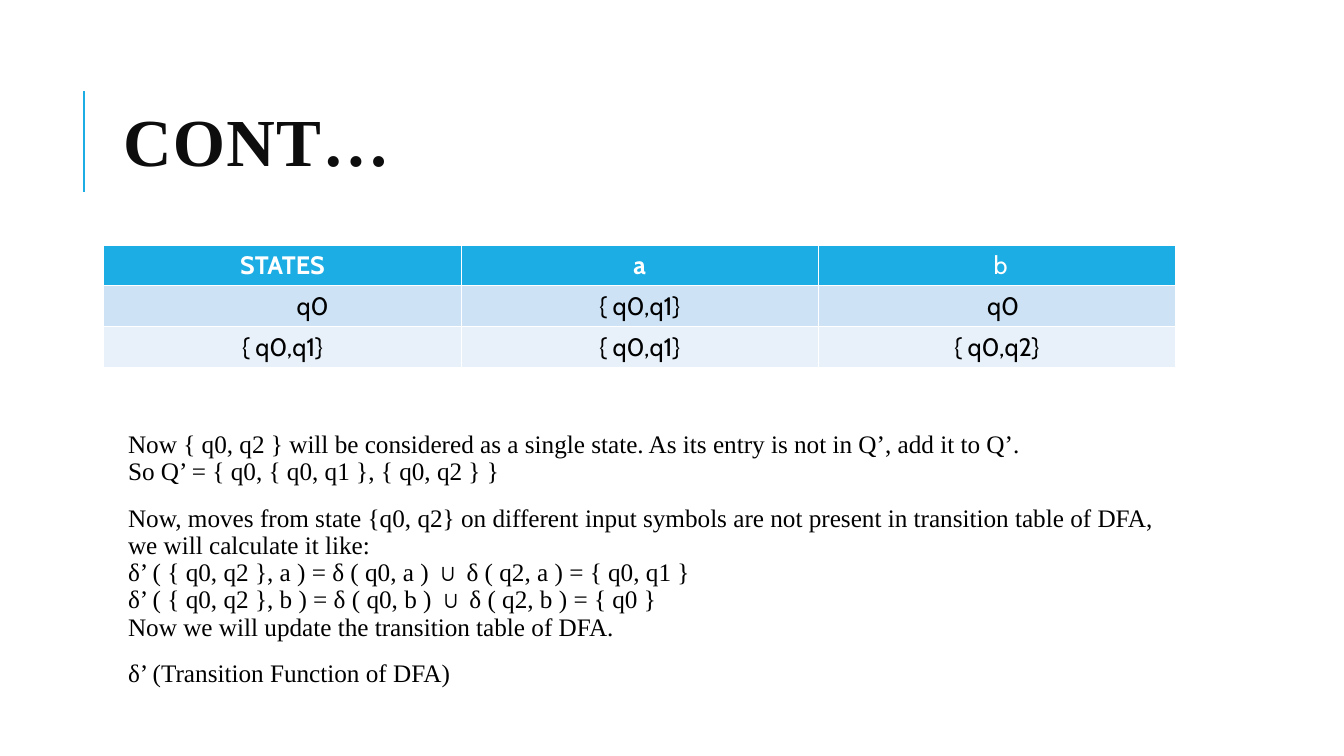
from lxml import etree
from pptx import Presentation
from pptx.dml.color import RGBColor
from pptx.enum import shapes, text
from pptx.oxml import ns
from pptx.util import Inches, Pt

SERIF = "Times New Roman"
ACCENT = "1CADE4"
ROW_FILLS = [ACCENT, "CDE3F5", "E8F1FA"]
STATES = [
    ["STATES", "a", "b"],
    ["q0", "{ q0,q1}", "q0"],
    ["{ q0,q1}", "{ q0,q1}", "{ q0,q2}"],
]
EXTRA_LEFT = {(0, 2): 0.07, (1, 0): 0.6, (1, 2): 0.12}
EXPLANATION = [
    "Now { q0, q2 } will be considered as a single state. "
    "As its entry is not in Q’, add it to Q’.\v"
    "So Q’ = { q0, { q0, q1 }, { q0, q2 } }",
    "Now, moves from state {q0, q2} on different input symbols are not "
    "present in transition table of DFA, we will calculate it like:\v"
    "δ’ ( { q0, q2 }, a ) = δ ( q0, a ) ∪ δ ( q2, a ) = { q0, q1 }\v"
    "δ’ ( { q0, q2 }, b ) = δ ( q0, b ) ∪ δ ( q2, b ) = { q0 }\v"
    "Now we will update the transition table of DFA.",
    "δ’ (Transition Function of DFA)",
]


def color(value):
    return RGBColor.from_string(value)


def set_font(font, name, size, value, bold=False):
    font.name = name
    font.size = Pt(size)
    font.bold = bold
    font.color.rgb = color(value)


def place(shape, left, top, width, height):
    shape.left, shape.top = Inches(left), Inches(top)
    shape.width, shape.height = Inches(width), Inches(height)


def add_accent_line(slide):
    accent = slide.shapes.add_connector(
        shapes.MSO_CONNECTOR.STRAIGHT,
        Inches(0.83), Inches(1.9), Inches(0.83), Inches(0.9))
    accent.line.color.rgb = color(ACCENT)
    accent.line.width = Pt(1.5)
    etree.SubElement(accent._element.spPr, ns.qn("a:effectLst"))


def fill_title(title):
    place(title, 1.12, 0.64, 10.63, 1.64)
    frame = title.text_frame
    frame.text = "CONT…"
    frame.auto_size = text.MSO_AUTO_SIZE.NONE
    frame.vertical_anchor = text.MSO_ANCHOR.MIDDLE
    heading = frame.paragraphs[0]
    heading.alignment = text.PP_ALIGN.LEFT
    heading.line_spacing = 0.8
    set_font(heading.font, SERIF, 48, "0D0D0D", True)
    heading.runs[0].font._element.set("spc", "100")


def fill_explanation(body):
    place(body, 1.12, 2.5, 10.57, 4.4)
    frame = body.text_frame
    frame.text = "\n".join(EXPLANATION)
    frame.auto_size = text.MSO_AUTO_SIZE.NONE
    frame.vertical_anchor = text.MSO_ANCHOR.TOP
    frame.margin_left = frame.margin_right = frame.margin_bottom = Inches(0.05)
    frame.margin_top = Inches(1.78)
    for index, step in enumerate(frame.paragraphs):
        step.line_spacing = 0.9
        step.space_before = Pt(12 if index else 0)
        step.space_after = Pt(2)
        set_font(step.font, SERIF, 18, "000000")
        properties = step._p.get_or_add_pPr()
        properties.set("marL", str(Inches(0.1)))
        properties.set("indent", "0")
        properties.insert_element_before(
            etree.Element(ns.qn("a:buNone")), "a:tabLst", "a:defRPr", "a:extLst")


def add_state_table(slide):
    table = slide.shapes.add_table(
        len(STATES), len(STATES[0]), Inches(1.03), Inches(2.43),
        Inches(10.63), Inches(1.22)).table
    for row, labels in enumerate(STATES):
        for column, label in enumerate(labels):
            cell = table.cell(row, column)
            cell.text = label
            cell.margin_left = Inches(0.1 + EXTRA_LEFT.get((row, column), 0))
            cell.fill.solid()
            cell.fill.fore_color.rgb = color(ROW_FILLS[row])
            entry = cell.text_frame.paragraphs[0]
            entry.alignment = text.PP_ALIGN.CENTER
            header = row == 0
            set_font(entry.font, "Cabin", 18, "FFFFFF" if header else "000000",
                     header and label != "b")
            entry.runs[0].font.bold = entry.font.bold


def main():
    deck = Presentation()
    deck.slide_width, deck.slide_height = Inches(13.33), Inches(7.5)
    slide = deck.slides.add_slide(deck.slide_layouts[1])
    add_accent_line(slide)
    fill_title(slide.shapes.title)
    fill_explanation(slide.placeholders[1])
    add_state_table(slide)
    deck.save("out.pptx")


if __name__ == "__main__":
    main()
